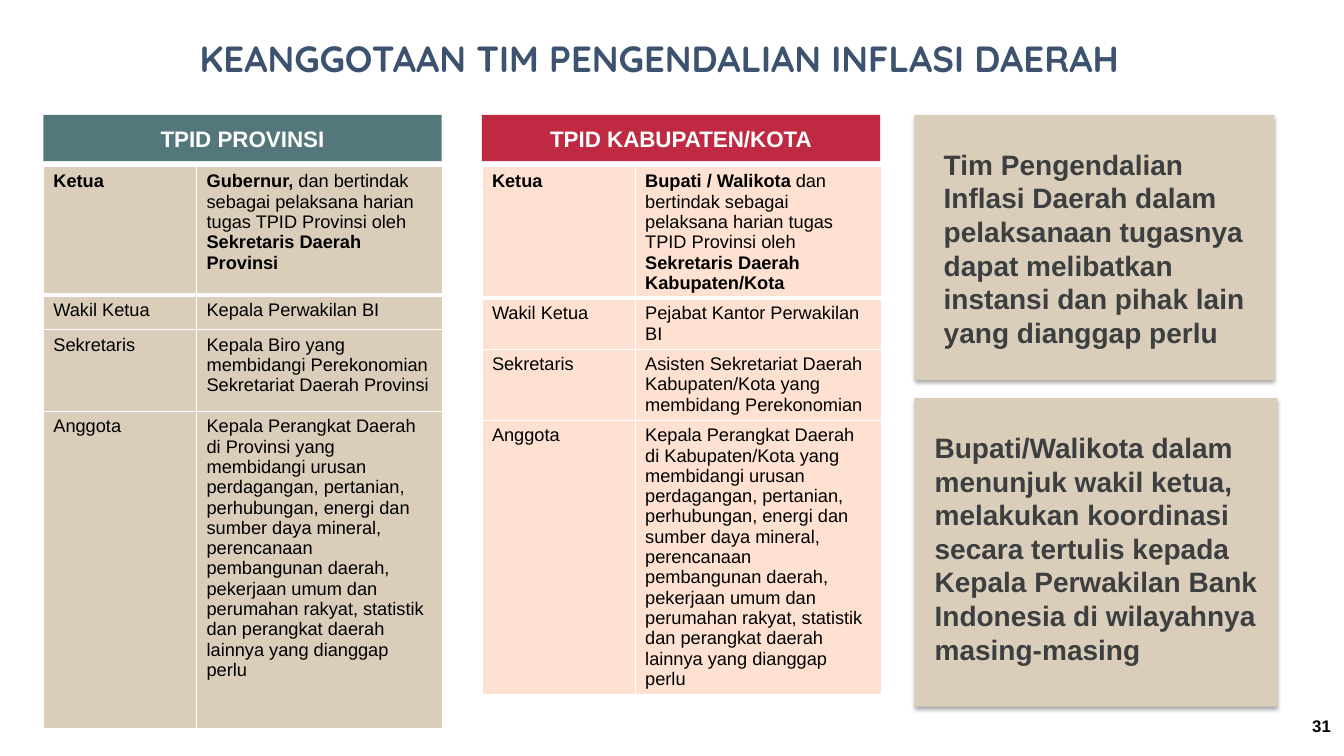
import pptx
import pptx.dml.color
import pptx.enum.shapes
import pptx.enum.text
import pptx.oxml
import pptx.oxml.ns
import pptx.util

RGBColor = pptx.dml.color.RGBColor
Inches = pptx.util.Inches
Pt = pptx.util.Pt
Align = pptx.enum.text.PP_ALIGN
Anchor = pptx.enum.text.MSO_ANCHOR

WHITE = RGBColor(0xFF, 0xFF, 0xFF)
BLACK = RGBColor(0x00, 0x00, 0x00)
TEAL = RGBColor(0x53, 0x77, 0x7A)
CRIMSON = RGBColor(0xC0, 0x29, 0x42)
SAND = RGBColor(0xDA, 0xCE, 0xBB)
PEACH = RGBColor(0xFE, 0xE1, 0xD1)
NAVY = RGBColor(0x3C, 0x52, 0x6F)
CHARCOAL = RGBColor(0x3C, 0x3E, 0x3F)

WIDTH, HEIGHT = 13.33, 7.5
CONTENT_TOP = 1.14
HEADER_HEIGHT = 0.46
ROLE_WIDTH, MEMBER_WIDTH = 1.52, 2.44
TEAM_WIDTH = 3.95

# Each member is a list of (text, bold) runs.
PROVINCE_ROWS = [
    ("Ketua", [("Gubernur, ", True),
               ("dan bertindak sebagai pelaksana harian tugas TPID Provinsi oleh ", False),
               ("Sekretaris Daerah Provinsi", True)]),
    ("Wakil Ketua", [("Kepala Perwakilan BI", False)]),
    ("Sekretaris", [("Kepala Biro yang membidangi Perekonomian Sekretariat Daerah Provinsi", False)]),
    ("Anggota", [("Kepala Perangkat Daerah di Provinsi yang membidangi urusan perdagangan, "
                  "pertanian, perhubungan, energi dan sumber daya mineral, perencanaan "
                  "pembangunan daerah, pekerjaan umum dan perumahan rakyat, statistik dan "
                  "perangkat daerah lainnya yang dianggap perlu", False)]),
]
REGENCY_ROWS = [
    ("Ketua", [("Bupati / Walikota ", True),
               ("dan bertindak sebagai pelaksana harian tugas TPID Provinsi oleh ", False),
               ("Sekretaris Daerah Kabupaten/Kota", True)]),
    ("Wakil Ketua", [("Pejabat Kantor Perwakilan BI", False)]),
    ("Sekretaris", [("Asisten Sekretariat Daerah Kabupaten/Kota yang membidang Perekonomian", False)]),
    ("Anggota", [("Kepala Perangkat Daerah di Kabupaten/Kota yang membidangi urusan perdagangan, "
                  "pertanian, perhubungan, energi dan sumber daya mineral, perencanaan "
                  "pembangunan daerah, pekerjaan umum dan perumahan rakyat, statistik dan "
                  "perangkat daerah lainnya yang dianggap perlu", False)]),
]


def style_font(font, size, color, bold=True, name="Arial"):
    font.name, font.size, font.bold = name, Pt(size), bold
    font.color.rgb = color


def write_text(text_frame, text, size, color, align, name="Arial"):
    text_frame.text = text
    text_frame.word_wrap = True
    paragraph = text_frame.paragraphs[0]
    paragraph.alignment = align
    style_font(paragraph.runs[0].font, size, color, name=name)


def add_rectangle(slide, left, top, width, height, fill):
    shape = slide.shapes.add_shape(
        pptx.enum.shapes.MSO_SHAPE.RECTANGLE,
        Inches(left), Inches(top), Inches(width), Inches(height))
    shape.shadow.inherit = False
    shape.fill.solid()
    shape.fill.fore_color.rgb = fill
    shape.line.fill.background()
    return shape


def set_cell_borders(cell, top, bottom):
    """Draw white cell borders; top and bottom are widths in points."""
    properties = cell._tc.get_or_add_tcPr()
    sides = [("lnL", 1), ("lnR", 1), ("lnT", top), ("lnB", bottom)]
    for position, (side, width) in enumerate(sides):
        properties.insert(position, pptx.oxml.parse_xml(
            f'<a:{side} {pptx.oxml.ns.nsdecls("a")} w="{Pt(width)}"><a:solidFill>'
            f'<a:srgbClr val="{WHITE}"/></a:solidFill></a:{side}>'))


def add_soft_shadow(shape):
    effects = shape._element.spPr.find(pptx.oxml.ns.qn("a:effectLst"))
    effects.append(pptx.oxml.parse_xml(
        f'<a:outerShdw {pptx.oxml.ns.nsdecls("a")} blurRad="{Pt(3.1)}" dist="{Pt(1.8)}" '
        f'dir="5400000" rotWithShape="0"><a:srgbClr val="{BLACK}">'
        '<a:alpha val="35000"/></a:srgbClr></a:outerShdw>'))


def add_title(slide, left, top, width, height):
    title = slide.shapes.title
    title.left, title.top = Inches(left), Inches(top)
    title.width, title.height = Inches(width), Inches(height)
    title.text_frame.auto_size = pptx.enum.text.MSO_AUTO_SIZE.NONE
    title.text_frame.vertical_anchor = Anchor.TOP
    write_text(title.text_frame, "KEANGGOTAAN TIM PENGENDALIAN INFLASI DAERAH",
               26, NAVY, Align.CENTER, "Quicksand")


def add_team(slide, left, top, heading, heading_fill, rows, row_heights, row_fill):
    """Place a coloured heading with the membership table below it."""
    header = add_rectangle(slide, left, top, TEAM_WIDTH, HEADER_HEIGHT, heading_fill)
    header.text_frame.vertical_anchor = Anchor.MIDDLE
    write_text(header.text_frame, heading, 16, WHITE, Align.CENTER)

    table = slide.shapes.add_table(
        len(rows), 2, Inches(left), Inches(top + HEADER_HEIGHT + 0.05),
        Inches(ROLE_WIDTH + MEMBER_WIDTH), Inches(sum(row_heights))).table
    table.columns[0].width = Inches(ROLE_WIDTH)
    table.columns[1].width = Inches(MEMBER_WIDTH)
    for row, ((role, member), height) in enumerate(zip(rows, row_heights)):
        table.rows[row].height = Inches(height)
        for column, runs in enumerate([[(role, row == 0)], member]):
            cell = table.cell(row, column)
            cell.fill.solid()
            cell.fill.fore_color.rgb = row_fill
            set_cell_borders(cell, 3 if row == 1 else 1, 3 if row == 0 else 1)
            for text, bold in runs:
                run = cell.text_frame.paragraphs[0].add_run()
                run.text = text
                style_font(run.font, 13, BLACK, bold)


def add_note(slide, left, top, width, height, text, indent):
    note = add_rectangle(slide, left, top, width, height, SAND)
    add_soft_shadow(note)
    text_frame = note.text_frame
    text_frame.vertical_anchor = Anchor.TOP
    text_frame.margin_left = Inches(0.1 + indent)
    text_frame.margin_top = Inches(0.32)
    write_text(text_frame, text, 20, CHARCOAL, Align.LEFT)


def add_page_number(slide, width, height):
    box = slide.shapes.add_textbox(Inches(WIDTH - width), Inches(7),
                                   Inches(width), Inches(height))
    text_frame = box.text_frame
    text_frame.margin_left = text_frame.margin_right = Inches(0.13)
    text_frame.margin_top = text_frame.margin_bottom = Inches(0.07)
    text_frame.vertical_anchor = Anchor.MIDDLE
    write_text(text_frame, "31", 12, BLACK, Align.RIGHT)


def main():
    presentation = pptx.Presentation()
    presentation.slide_width = Inches(WIDTH)
    presentation.slide_height = Inches(HEIGHT)
    slide = presentation.slides.add_slide(presentation.slide_layouts[5])

    add_title(slide, 0.76, 0.31, 11.57, 0.54)
    add_team(slide, 0.43, CONTENT_TOP, "TPID PROVINSI", TEAL,
             PROVINCE_ROWS, [1.28, 0.34, 0.81, 3.15], SAND)
    add_team(slide, 4.78, CONTENT_TOP, "TPID KABUPATEN/KOTA", CRIMSON,
             REGENCY_ROWS, [1.3, 0.5, 0.7, 2.72], PEACH)
    add_note(slide, 9.07, CONTENT_TOP, 3.57, 2.63,
             "Tim Pengendalian Inflasi Daerah dalam pelaksanaan tugasnya dapat "
             "melibatkan instansi dan pihak lain yang dianggap perlu", 0.19)
    add_note(slide, 9.07, 3.95, 3.6, 3.06,
             "Bupati/Walikota dalam menunjuk wakil ketua, melakukan koordinasi "
             "secara tertulis kepada Kepala Perwakilan Bank Indonesia di "
             "wilayahnya masing-masing", 0.1)
    add_page_number(slide, 0.66, 0.4)
    presentation.save("out.pptx")


if __name__ == "__main__":
    main()
